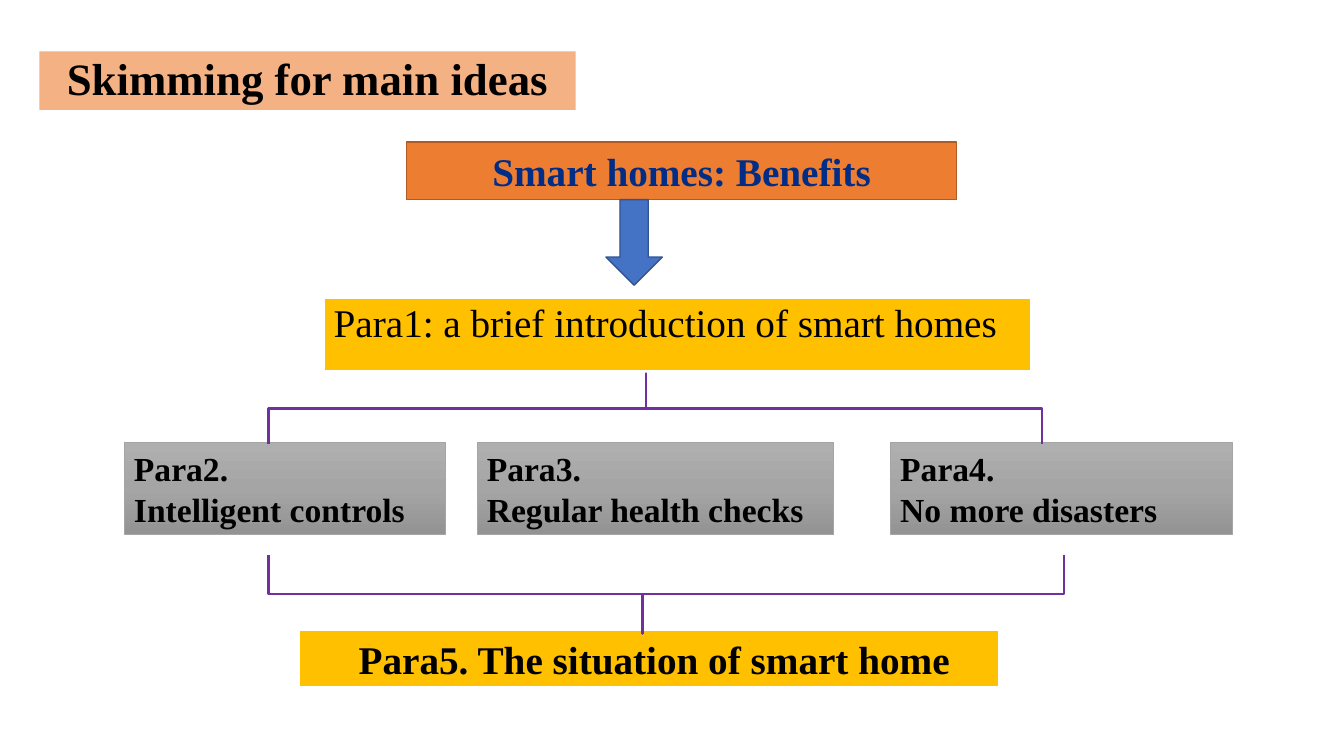
from copy import deepcopy
from dataclasses import dataclass

from lxml.etree import SubElement
from pptx import Presentation
from pptx.dml.color import RGBColor
from pptx.dml.fill import FillFormat
from pptx.enum.shapes import MSO_SHAPE as Preset
from pptx.enum.text import MSO_ANCHOR as Anchor, MSO_AUTO_SIZE as AutoSize, PP_ALIGN as Align
from pptx.oxml.ns import qn
from pptx.shapes.autoshape import Shape
from pptx.slide import Slide
from pptx.util import Emu, Pt

EMU_PER_PX = 9144
FONT = "Times New Roman"
BLACK, WHITE, GOLD, PURPLE = "000000", "FFFFFF", "FFC000", "7030A0"
CARD_GREYS = ("AFAFAF", "A5A5A5", "939393")
TOPIC_BLUES = ("012D86", "0E2557")


@dataclass(frozen=True)
class Box:
    """A rectangle on the slide, in px."""
    left: int
    top: int
    width: int
    height: int


@dataclass(frozen=True)
class Panel:
    """A filled rectangle with bold text."""
    box: Box
    lines: tuple[str, ...]
    fill: tuple[str, ...]
    outline: str
    outline_pt: float
    size: int = 28
    align: Align = Align.CENTER
    ink: tuple[str, ...] = (BLACK,)


@dataclass(frozen=True)
class Brace:
    """A bracket with its extent as seen after turning."""
    box: Box
    turn: int
    tip: float


def card(left: int, width: int, heading: str, idea: str) -> Panel:
    """Describe one grey paragraph card."""
    return Panel(Box(left, 439, width, 91), (heading, idea), CARD_GREYS, "A5A5A5", 0.5, 24, Align.LEFT)


PANELS = (
    card(123, 319, "Para2.", "Intelligent controls"),
    card(473, 354, "Para3.", "Regular health checks"),
    card(883, 339, "Para4.", "No more disasters"),
    Panel(Box(297, 625, 694, 57), (" Para5. The situation of smart home",), (GOLD,), WHITE, 1.5),
    Panel(Box(403, 141, 546, 57), ("Smart homes: Benefits",), ("ED7D31",), "AF5C24", 1, ink=TOPIC_BLUES),
)
BRACES = (
    Brace(Box(267, 370, 767, 70), 90, 0.512),
    Brace(Box(267, 550, 789, 78), 270, 0.47),
)


def px(length: float) -> Emu:
    """Turn px into EMU."""
    return Emu(round(length * EMU_PER_PX))


def color(code: str) -> RGBColor:
    """Turn a hex string into a colour."""
    return RGBColor.from_string(code)


def paint(fill: FillFormat, shades: tuple[str, ...], angle: int = 0) -> None:
    """Fill with one shade, or with evenly spaced gradient shades."""
    if len(shades) == 1:
        fill.solid()
        fill.fore_color.rgb = color(shades[0])
        return
    fill.gradient()
    fill.gradient_angle = angle
    first_stop = fill.gradient_stops[0]._gs
    for _ in shades[2:]:
        first_stop.addnext(deepcopy(first_stop))
    for rank, (stop, shade) in enumerate(zip(fill.gradient_stops, shades)):
        stop.position = rank / (len(shades) - 1)
        stop.color.rgb = color(shade)


def place(shape: Shape, box: Box) -> None:
    """Move and size a shape."""
    shape.left, shape.top = px(box.left), px(box.top)
    shape.width, shape.height = px(box.width), px(box.height)


def add_preset(slide: Slide, preset: Preset, box: Box, outline: str, outline_pt: float) -> Shape:
    """Add an outlined preset shape without a shadow."""
    shape = slide.shapes.add_shape(preset, px(box.left), px(box.top), px(box.width), px(box.height))
    shape.shadow.inherit = False
    shape.line.color.rgb = color(outline)
    shape.line.width = Pt(outline_pt)
    return shape


def write(shape: Shape, lines: tuple[str, ...], size: int, align: Align, anchor: Anchor,
          bold: bool = True, ink: tuple[str, ...] = (BLACK,), spacing: float = 1.0) -> None:
    """Write one paragraph per line."""
    frame = shape.text_frame
    frame.word_wrap = True
    frame.auto_size = AutoSize.NONE
    frame.vertical_anchor = anchor
    for rank, line in enumerate(lines):
        paragraph = frame.add_paragraph() if rank else frame.paragraphs[0]
        paragraph.alignment = align
        paragraph.line_spacing = spacing
        paragraph.space_before = Pt(0)
        run = paragraph.add_run()
        run.text = line
        run.font.name, run.font.size, run.font.bold = FONT, Pt(size), bold
        paint(run.font.fill, ink)


def add_panel(slide: Slide, panel: Panel) -> None:
    """Draw a panel."""
    shape = add_preset(slide, Preset.RECTANGLE, panel.box, panel.outline, panel.outline_pt)
    paint(shape.fill, panel.fill, 270)
    write(shape, panel.lines, panel.size, panel.align, Anchor.MIDDLE, ink=panel.ink)


def add_brace(slide: Slide, brace: Brace) -> None:
    """Draw a square bracket turned on its side."""
    seen = brace.box
    shift = (seen.width - seen.height) // 2
    upright = Box(seen.left + shift, seen.top - shift, seen.height, seen.width)
    shape = add_preset(slide, Preset.LEFT_BRACE, upright, PURPLE, 1.75)
    shape.fill.background()
    shape.rotation = brace.turn
    shape.adjustments[0], shape.adjustments[1] = 0, brace.tip


def main() -> None:
    """Build and save the slide."""
    deck = Presentation()
    deck.slide_width, deck.slide_height = px(1333), px(750)
    slide = deck.slides.add_slide(deck.slide_layouts[1])

    title = slide.shapes.title
    place(title, Box(39, 51, 532, 58))
    paint(title.fill, ("F4B183",))
    write(title, ("Skimming for main ideas",), 32, Align.CENTER, Anchor.MIDDLE, spacing=0.9)

    introduction = slide.placeholders[1]
    place(introduction, Box(321, 296, 702, 72))
    paint(introduction.fill, (GOLD,))
    introduction.line.color.rgb = color(WHITE)
    introduction.line.width = Pt(1.5)
    properties = introduction.text_frame.paragraphs[0]._p.get_or_add_pPr()
    properties.set("marL", "0")
    properties.set("indent", "0")
    SubElement(properties, qn("a:buNone"))
    write(introduction, ("Para1: a brief introduction of smart homes",), 28, Align.LEFT, Anchor.TOP,
          bold=False, spacing=0.9)

    for panel in PANELS:
        add_panel(slide, panel)
    for brace in BRACES:
        add_brace(slide, brace)
    arrow = add_preset(slide, Preset.DOWN_ARROW, Box(601, 198, 56, 85), "325491", 1)
    paint(arrow.fill, ("4472C4",))

    deck.save("out.pptx")


if __name__ == "__main__":
    main()
